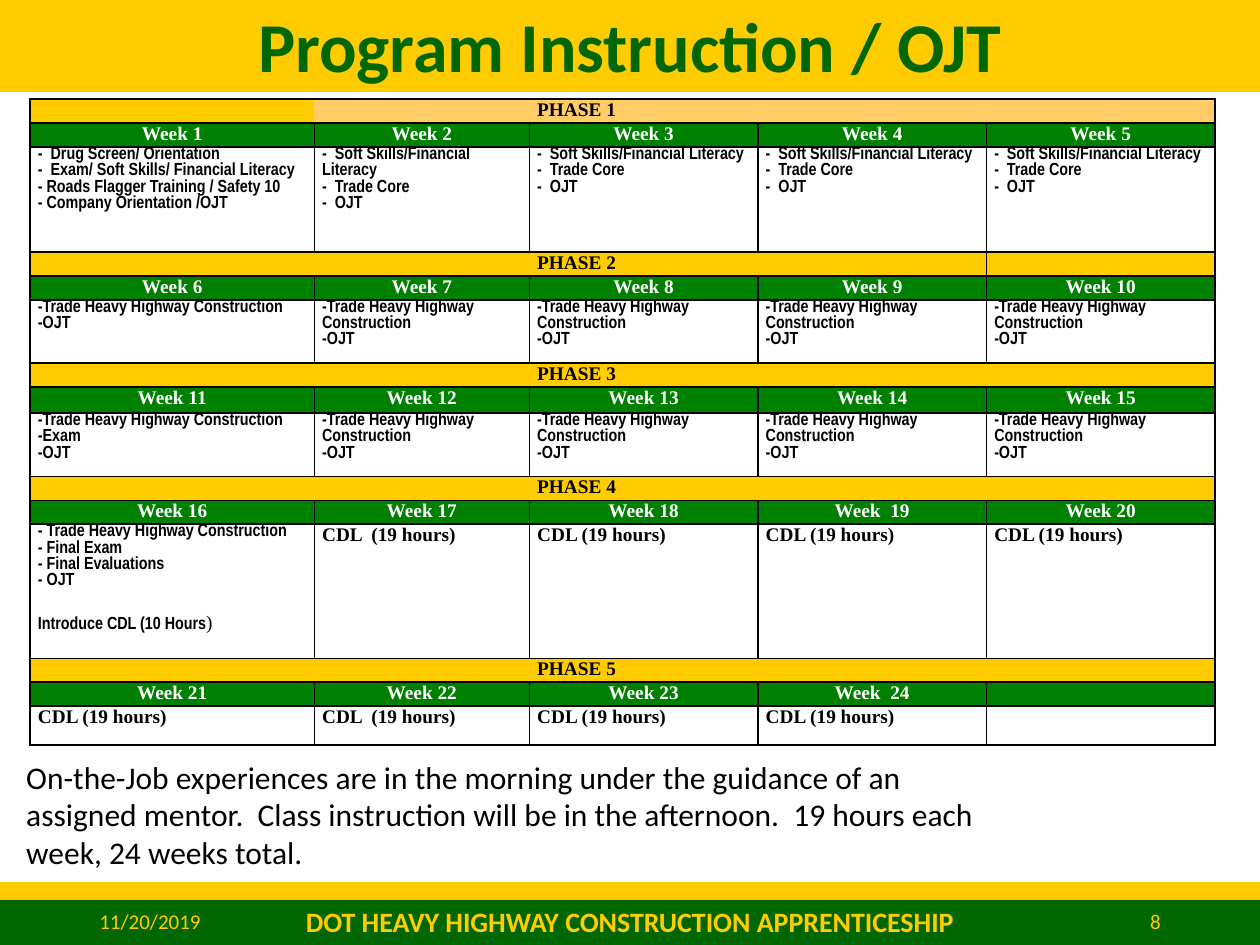
from lxml import etree
from pptx import Presentation
from pptx.dml.color import RGBColor
from pptx.enum.shapes import MSO_SHAPE
from pptx.enum.text import MSO_ANCHOR, PP_ALIGN
from pptx.oxml.ns import qn
from pptx.util import Pt

RECTANGLE = MSO_SHAPE.RECTANGLE
TOP, MIDDLE = MSO_ANCHOR.TOP, MSO_ANCHOR.MIDDLE
LEFT, CENTER, RIGHT = PP_ALIGN.LEFT, PP_ALIGN.CENTER, PP_ALIGN.RIGHT

GOLD, ORANGE, DARK_GREEN, GREEN = "FFCC00", "FFCC66", "006600", "008000"
BLACK, WHITE = "000000", "FFFFFF"
SERIF, NARROW = "Times New Roman", "Arial Narrow"
NO_STYLE_GRID = "{2D5ABB26-0587-4C30-8999-92F81FD0307C}"


def color(hex_string):
    return RGBColor.from_string(hex_string)


def add_run(paragraph, text, size=11, font=SERIF, ink=BLACK, bold=True):
    run = paragraph.add_run()
    run.text = text
    run.font.size = Pt(size)
    run.font.name = font
    run.font.bold = bold
    run.font.color.rgb = color(ink)


def write(frame, text, align=LEFT, spacing=None, **style):
    """Write each line of text as one paragraph."""
    for index, line in enumerate(text.split("\n")):
        paragraph = frame.paragraphs[0] if index == 0 else frame.add_paragraph()
        paragraph.alignment = align
        if spacing:
            paragraph.line_spacing = spacing
        add_run(paragraph, line, **style)


class SlideBuilder:
    def __init__(self, slide, font="Calibri"):
        self.slide = slide
        self.font = font

    def band(self, top, height, fill):
        shape = self.slide.shapes.add_shape(RECTANGLE, 0, Pt(top), Pt(720), Pt(height))
        shape.shadow.inherit = False
        shape.fill.solid()
        shape.fill.fore_color.rgb = color(fill)
        shape.line.fill.background()

    def text(self, box, text, anchor=MIDDLE, **style):
        shape = self.slide.shapes.add_textbox(*(Pt(value) for value in box))
        frame = shape.text_frame
        frame.word_wrap = True
        frame.vertical_anchor = anchor
        write(frame, text, font=self.font, **style)

    def table(self, left, top, widths, heights):
        shape = self.slide.shapes.add_table(
            len(heights), len(widths), Pt(left), Pt(top), Pt(sum(widths)), Pt(sum(heights)))
        table = shape.table
        table.first_row = table.horz_banding = False
        table._tbl.tblPr.find(qn("a:tableStyleId")).text = NO_STYLE_GRID
        for column, width in zip(table.columns, widths):
            column.width = Pt(width)
        for row, height in zip(table.rows, heights):
            row.height = Pt(height)
        return table

    def cell(self, cell, text, fill, sides="LRTB", **style):
        cell.margin_left = cell.margin_right = Pt(4.5)
        cell.margin_top = cell.margin_bottom = 0
        cell.vertical_anchor = TOP
        properties = cell._tc.get_or_add_tcPr()
        for side in "LRTB":
            line = etree.SubElement(properties, qn(f"a:ln{side}"), w=str(Pt(1)))
            if side in sides:
                solid = etree.SubElement(line, qn("a:solidFill"))
                etree.SubElement(solid, qn("a:srgbClr"), val=BLACK)
            else:
                etree.SubElement(line, qn("a:noFill"))
        cell.fill.solid()
        cell.fill.fore_color.rgb = color(fill)
        if text:
            write(cell.text_frame, text, **style)
        else:
            # Small end mark, so that an empty cell does not stretch its row
            etree.SubElement(cell.text_frame.paragraphs[0]._p, qn("a:endParaRPr"), sz="1000")


SKILLS = "-  Soft Skills/Financial Literacy\n-  Trade Core\n-  OJT"
COURSE = "Trade Heavy Highway Construction"
HIGHWAY = f"-{COURSE}\n-OJT"
CDL = ["CDL  (19 hours)"] + ["CDL (19 hours)"] * 3
ORIENTATION = ("-  Drug Screen/ Orientation\n-  Exam/ Soft Skills/ Financial Literacy\n"
               "- Roads Flagger Training / Safety 10\n- Company Orientation /OJT")
FINAL = f"- {COURSE}\n- Final Exam\n- Final Evaluations\n- OJT"

# Week contents of each phase
PHASES = [
    [ORIENTATION] + [SKILLS] * 4,
    [HIGHWAY] * 5,
    [f"-{COURSE}\n-Exam\n-OJT"] + [HIGHWAY] * 4,
    [FINAL] + CDL,
    ["CDL (19 hours)"] + CDL[:3] + [""],
]
WIDTHS = [162.4, 122.9, 130.6, 130.6, 130.6]
HEAD = 13.7
WEEK_HEIGHTS = [HEAD, HEAD, 14.9, HEAD, HEAD]
BODY_HEIGHTS = [60, 36, 36, 76.6, 22.3]


def fill_phase_row(builder, table, phase):
    # The phase row is one open band; phase 2 closes before its last cell
    breaks = {0, 4, 5} if phase == 1 else {0, 5}
    for column in range(5):
        sides = "TB" + "L" * (column in breaks) + "R" * (column + 1 in breaks)
        builder.cell(table.cell(phase * 3, column),
                     f"PHASE {phase + 1}" if column == 2 else "",
                     ORANGE if phase == 0 and column else GOLD, sides)


def fill_week_rows(builder, table, phase, contents):
    for column, content in enumerate(contents):
        week = phase * 5 + column + 1
        gap = "  " if week in (19, 24) else " "
        heading = f"Week{gap}{week}" if content else ""
        builder.cell(table.cell(phase * 3 + 1, column), heading, GREEN,
                     align=CENTER, ink=WHITE)
        style = {} if content.startswith("CDL") else {"size": 10, "font": NARROW}
        builder.cell(table.cell(phase * 3 + 2, column), content, WHITE, **style)


def main():
    presentation = Presentation()
    presentation.slide_width, presentation.slide_height = Pt(720), Pt(540)
    builder = SlideBuilder(presentation.slides.add_slide(presentation.slide_layouts[6]))

    # Bands, title and footer
    builder.band(514, 26, DARK_GREEN)
    builder.band(504, 10, GOLD)
    builder.band(0, 52.6, GOLD)
    builder.text((0, -3.6, 720, 64), "Program Instruction / OJT",
                 align=CENTER, spacing=0.9, size=40, ink=DARK_GREEN)
    builder.text((508.3, 512, 162, 28.8), "8", align=RIGHT, size=12, ink=GOLD, bold=False)
    builder.text((49.7, 512, 162, 28.8), "11/20/2019", size=12, ink=GOLD, bold=False)
    builder.text((162, 512, 396, 28.8), "DOT HEAVY HIGHWAY CONSTRUCTION APPRENTICESHIP",
                 align=CENTER, size=16, ink=GOLD)

    # Schedule
    heights = [height for week, body in zip(WEEK_HEIGHTS, BODY_HEIGHTS)
               for height in (HEAD, week, body)]
    table = builder.table(17.2, 56.7, WIDTHS, heights)
    for phase, contents in enumerate(PHASES):
        fill_phase_row(builder, table, phase)
        fill_week_rows(builder, table, phase, contents)

    # Closing line of week 16
    paragraph = table.cell(11, 0).text_frame.add_paragraph()
    paragraph.space_before = Pt(13.5)
    add_run(paragraph, "Introduce CDL (10 Hours", size=10, font=NARROW)
    add_run(paragraph, ")", bold=False)

    # Note
    builder.text((7.9, 429.4, 566, 72.7),
                 "On-the-Job experiences are in the morning under the guidance of an "
                 "assigned mentor.  Class instruction will be in the afternoon.  "
                 "19 hours each week, 24 weeks total.",
                 anchor=TOP, size=18, bold=False)

    presentation.save("out.pptx")


if __name__ == "__main__":
    main()
